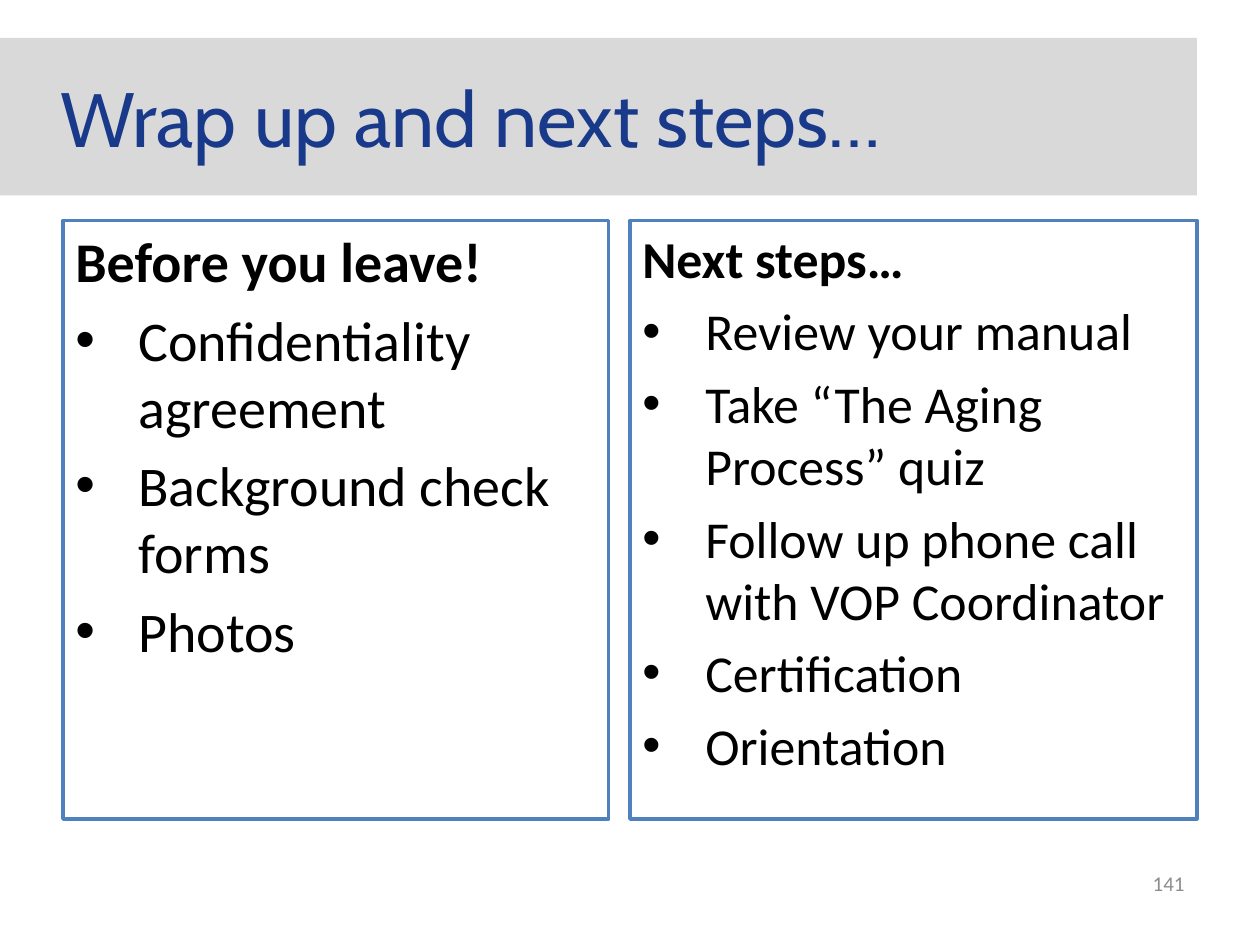
import pptx
import pptx.util
import pptx.dml.color
import pptx.enum.shapes
import pptx.enum.text
import pptx.oxml
import pptx.oxml.ns
from pptx.util import Inches

ALIGN = pptx.enum.text.PP_ALIGN
ANCHOR = pptx.enum.text.MSO_ANCHOR


def color(value):
    return pptx.dml.color.RGBColor.from_string(value)


def add_run(para, text, font, size, tint, bold=False):
    span = para.add_run()
    span.text = text
    span.font.name = font
    span.font.size = pptx.util.Pt(size)
    span.font.bold = bold
    span.font.color.rgb = color(tint)


def set_indent(para, left, first=0):
    properties = para._p.get_or_add_pPr()
    properties.set("marL", str(Inches(left)))
    properties.set("indent", str(Inches(first)))


def add_bullet(para):
    set_indent(para, 0.5, -0.5)
    properties = para._p.get_or_add_pPr()
    for xml in ('<a:buFont %s typeface="Arial"/>', '<a:buChar %s char="•"/>'):
        properties.append(pptx.oxml.parse_xml(xml % pptx.oxml.ns.nsdecls("a")))


def place_title(page, left, top, width, height, text):
    title = page.shapes.title
    title.left, title.top = Inches(left), Inches(top)
    title.width, title.height = Inches(width), Inches(height)
    title.fill.solid()
    title.fill.fore_color.rgb = color("D9D9D9")
    frame = title.text_frame
    frame.auto_size = pptx.enum.text.MSO_AUTO_SIZE.NONE
    frame.vertical_anchor = ANCHOR.MIDDLE
    para = frame.paragraphs[0]
    para.alignment = ALIGN.LEFT
    set_indent(para, 0.38)
    add_run(para, text, "Cabin", 44, "19398A")


def add_panel(page, left, top, width, height, heading, items, size):
    panel = page.shapes.add_shape(
        pptx.enum.shapes.MSO_SHAPE.RECTANGLE,
        Inches(left), Inches(top), Inches(width), Inches(height))
    panel.shadow.inherit = False
    panel.fill.solid()
    panel.fill.fore_color.rgb = color("FFFFFF")
    panel.line.color.rgb = color("4F81BD")
    panel.line.width = pptx.util.Pt(2)
    frame = panel.text_frame
    frame.word_wrap = True
    frame.vertical_anchor = ANCHOR.TOP
    # Heading
    para = frame.paragraphs[0]
    para.alignment = ALIGN.LEFT
    add_run(para, heading, "Calibri", size, "000000", bold=True)
    # Bulleted items
    for item in items:
        para = frame.add_paragraph()
        para.alignment = ALIGN.LEFT
        para.space_before = pptx.util.Pt(round(size * 0.2, 1))
        add_bullet(para)
        add_run(para, item, "Calibri", size, "000000")


def add_page_number(page, left, top, width, height, number):
    box = page.shapes.add_textbox(
        Inches(left), Inches(top), Inches(width), Inches(height))
    frame = box.text_frame
    frame.word_wrap = True
    frame.vertical_anchor = ANCHOR.MIDDLE
    para = frame.paragraphs[0]
    para.alignment = ALIGN.RIGHT
    add_run(para, number, "Calibri", 12, "8C8C8C")


def main():
    deck = pptx.Presentation()
    deck.slide_width, deck.slide_height = Inches(10), Inches(7.5)
    page = deck.slides.add_slide(deck.slide_layouts.get_by_name("Title Only"))

    # Title band
    place_title(page, 0, 0.3, 9.5, 1.25, "Wrap up and next steps…")

    # Two panels
    add_panel(page, 0.5, 1.75, 4.33, 4.75, "Before you leave!", [
        "Confidentiality agreement",
        "Background check forms",
        "Photos",
    ], 32)
    add_panel(page, 5, 1.75, 4.5, 4.75, "Next steps…", [
        "Review your manual",
        "Take “The Aging Process” quiz",
        "Follow up phone call with VOP Coordinator",
        "Certification",
        "Orientation",
    ], 29.6)

    # Page number
    add_page_number(page, 7.33, 6.81, 2.17, 0.4, "141")
    deck.save("out.pptx")


if __name__ == "__main__":
    main()
